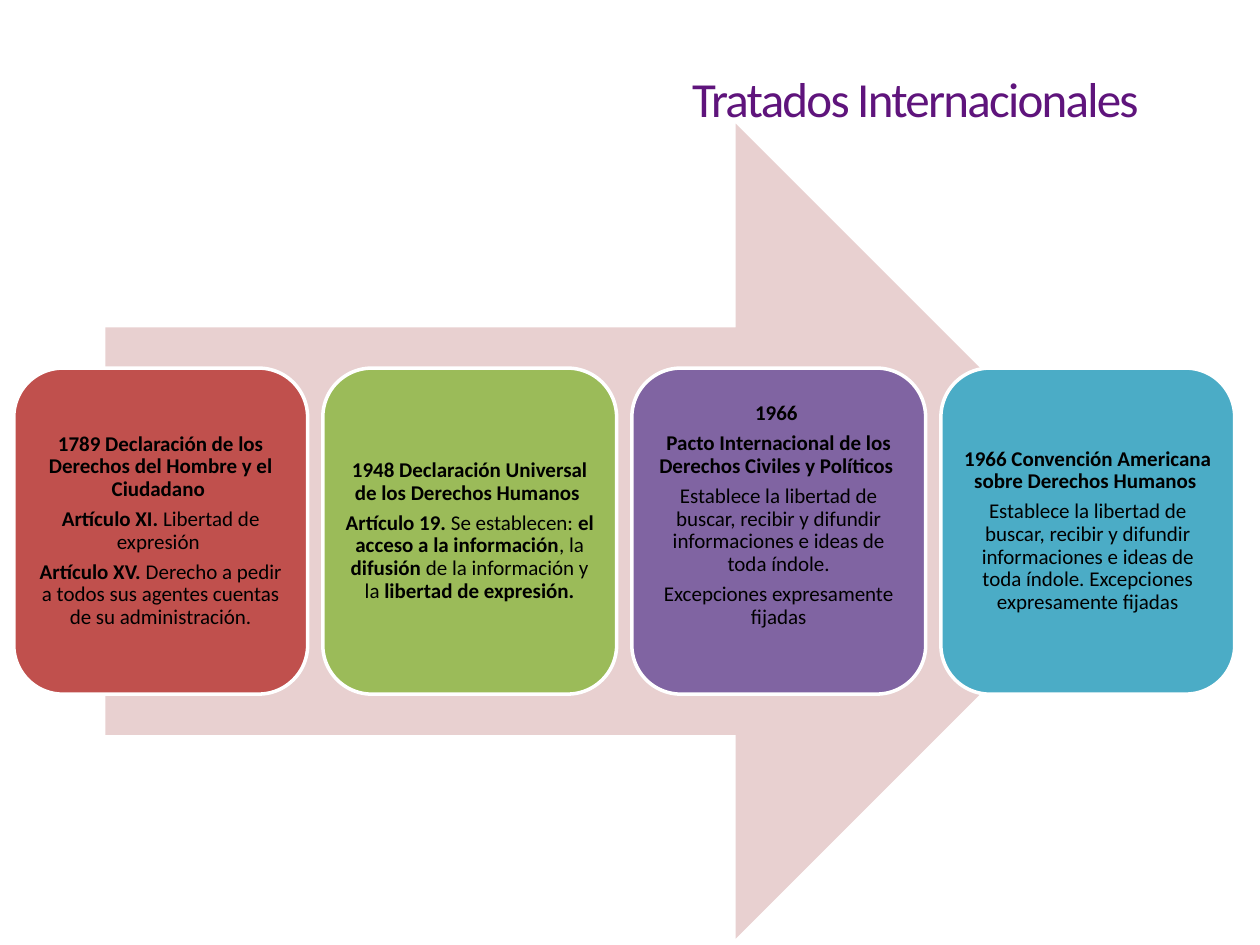
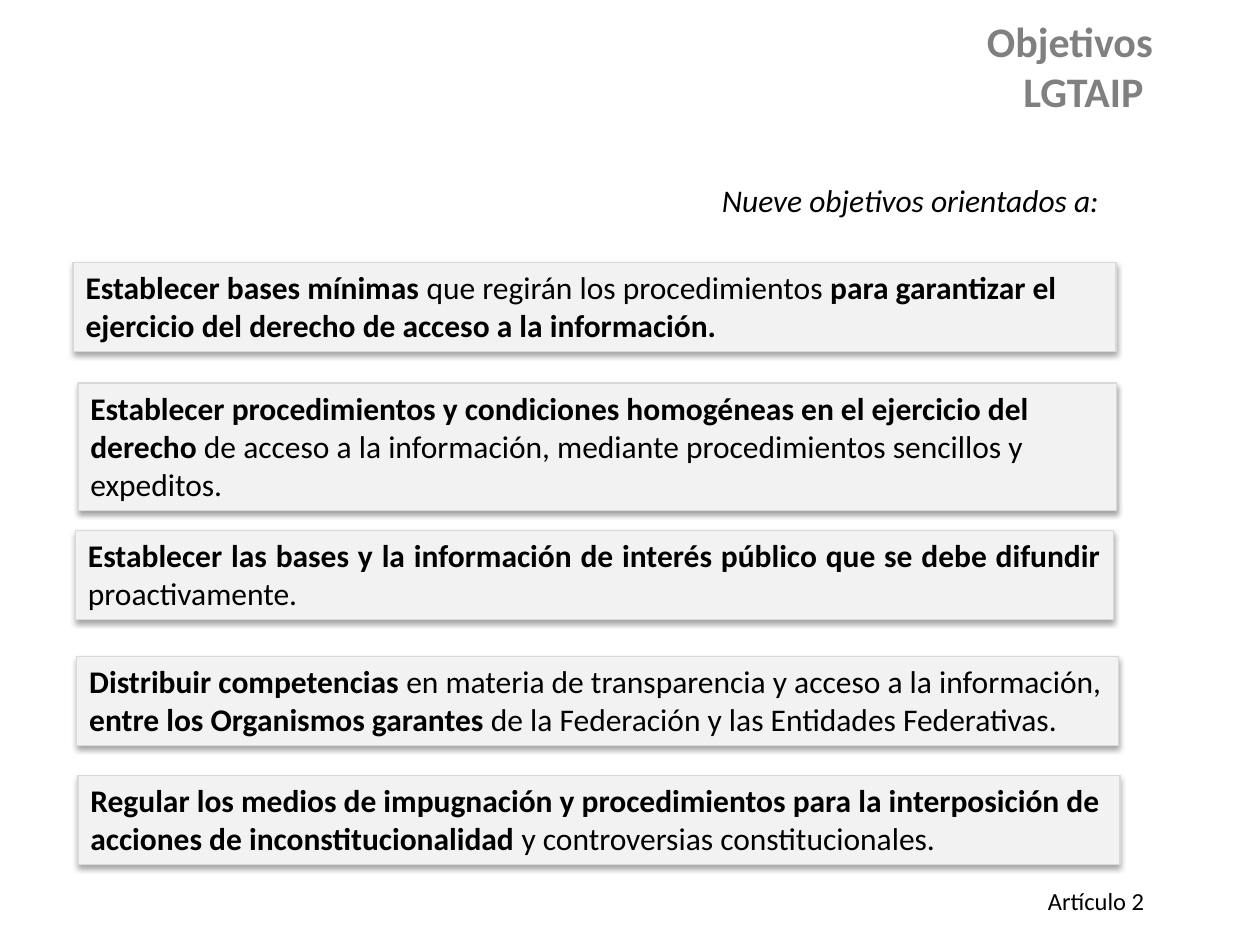
from dataclasses import dataclass
from lxml.etree import SubElement
from pptx import Presentation
from pptx.dml.color import RGBColor
from pptx.enum.shapes import MSO_SHAPE as Preset
from pptx.enum.text import MSO_ANCHOR as Anchor, MSO_AUTO_SIZE as AutoSize, PP_ALIGN as Align
from pptx.oxml.ns import qn
from pptx.util import Pt

FONT = "Calibri"
BLACK = RGBColor(0x00, 0x00, 0x00)
WHITE = RGBColor(0xFF, 0xFF, 0xFF)
PURPLE = RGBColor(0x5F, 0x14, 0x7C)
GREY = RGBColor(0x80, 0x80, 0x80)
PALE_GREY = RGBColor(0xF2, 0xF2, 0xF2)
EDGE_GREY = RGBColor(0xD9, 0xD9, 0xD9)
PALE_PINK = RGBColor(0xE8, 0xD0, 0xD0)
RED = RGBColor(0xC0, 0x50, 0x4D)
GREEN = RGBColor(0x9B, 0xBB, 0x59)
VIOLET = RGBColor(0x80, 0x64, 0xA2)
BLUE = RGBColor(0x4B, 0xAC, 0xC6)
BOLD, PLAIN = True, False
RIGHTS = "Establece la libertad de buscar, recibir y difundir informaciones e ideas de toda índole."
EXCEPTIONS = "Excepciones expresamente fijadas"

TREATIES = [
    (RED, 3.6, [
        [(BOLD, "1789 Declaración de los Derechos del Hombre y el Ciudadano ")],
        [(BOLD, "Artículo XI."), (PLAIN, " Libertad de expresión ")],
        [(BOLD, "Artículo XV."),
         (PLAIN, " Derecho a pedir a todos sus agentes cuentas de su administración.")],
    ]),
    (GREEN, 3.6, [
        [(BOLD, "1948 Declaración Universal de los Derechos Humanos ")],
        [(BOLD, "Artículo 19. "), (PLAIN, "Se establecen: "),
         (BOLD, "el acceso a la información"), (PLAIN, ", la "), (BOLD, "difusión "),
         (PLAIN, "de la información y la "), (BOLD, "libertad de expresión.")],
    ]),
    (VIOLET, 21, [
        [(BOLD, "1966 ")],
        [(BOLD, "Pacto Internacional de los Derechos Civiles y Políticos ")],
        [(PLAIN, RIGHTS)],
        [(PLAIN, EXCEPTIONS)],
    ]),
    (BLUE, 3.6, [
        [(BOLD, "1966 Convención Americana sobre Derechos Humanos ")],
        [(PLAIN, f"{RIGHTS} {EXCEPTIONS}")],
    ]),
]

OBJECTIVES = [
    ((41.8, 149.8, 596, 51), Align.LEFT, [
        [(BOLD, "Establecer bases mínimas "), (PLAIN, "que regirán los procedimientos "),
         (BOLD, "para garantizar el ejercicio del derecho de acceso a la información.")],
    ]),
    ((44.6, 218.9, 593.3, 72.7), Align.LEFT, [
        [(BOLD, "Establecer procedimientos y condiciones homogéneas en el ejercicio del derecho "),
         (PLAIN, "de acceso a la información, mediante procedimientos sencillos y expeditos.")],
    ]),
    ((43.2, 303, 593.3, 51), Align.JUSTIFY, [
        [(BOLD, "Establecer las bases y la información de interés público que se debe difundir "),
         (PLAIN, "proactivamente.")],
    ]),
    ((43.9, 375, 595.4, 51), Align.LEFT, [
        [(BOLD, "Distribuir competencias "),
         (PLAIN, "en materia de transparencia y acceso a la información,")],
        [(BOLD, "entre los Organismos garantes"),
         (PLAIN, " de la Federación y las Entidades Federativas.")],
    ]),
    ((44.6, 443, 595.4, 51), Align.LEFT, [
        [(BOLD, "Regular los medios de impugnación y procedimientos para la interposición "
                "de acciones de inconstitucionalidad"),
         (PLAIN, " y controversias constitucionales.")],
    ]),
]


@dataclass
class TextStyle:
    size: float
    color: RGBColor = BLACK
    align: Align = Align.LEFT
    italic: bool = False
    spacing: float = 0
    line: float = 1
    after: float = 0


def write(frame, paragraphs, style):
    frame.word_wrap = True
    for index, parts in enumerate(paragraphs):
        paragraph = frame.add_paragraph() if index else frame.paragraphs[0]
        paragraph.alignment = style.align
        paragraph.line_spacing = style.line
        paragraph.space_after = Pt(style.after)
        for bold, text in parts:
            if text == "\n":
                paragraph.add_line_break()
                continue
            run = paragraph.add_run()
            run.text = text
            font = run.font
            font.name, font.size = FONT, Pt(style.size)
            font.bold, font.italic = bold, style.italic
            font.color.rgb = style.color
            if style.spacing:
                run._r.get_or_add_rPr().set("spc", str(int(style.spacing * 100)))


def add_title(slide, box, parts, style):
    title = slide.shapes.title
    title.left, title.top, title.width, title.height = map(Pt, box)
    title.text_frame.auto_size = AutoSize.NONE
    title.text_frame.vertical_anchor = Anchor.MIDDLE
    write(title.text_frame, [parts], style)


def add_label(slide, box, text, style):
    label = slide.shapes.add_textbox(*map(Pt, box))
    write(label.text_frame, [[(PLAIN, text)]], style)


def add_block(slide, preset, box, fill, edge=None, edge_width=0.75):
    block = slide.shapes.add_shape(preset, *map(Pt, box))
    block.shadow.inherit = False
    block.fill.solid()
    block.fill.fore_color.rgb = fill
    if edge is None:
        block.line.fill.background()
    else:
        block.line.color.rgb = edge
        block.line.width = Pt(edge_width)
    return block


def add_soft_shadow(block):
    effects = block._element.spPr.find(qn("a:effectLst"))
    shadow = SubElement(effects, qn("a:outerShdw"), blurRad=str(Pt(3.1)), dist=str(Pt(1.8)),
                        dir="5400000", rotWithShape="0")
    black = SubElement(shadow, qn("a:srgbClr"), val=str(BLACK))
    SubElement(black, qn("a:alpha"), val="35000")


def add_timeline(slide, left, top, width, height):
    gap, card_height = 8.65, height * 0.4
    card_width = (width - gap * (len(TREATIES) - 1)) / len(TREATIES)
    arrow_width = width * 0.85
    add_block(slide, Preset.RIGHT_ARROW,
              (left + (width - arrow_width) / 2, top, arrow_width, height), PALE_PINK)
    style = TextStyle(12, align=Align.CENTER, line=0.9, after=4.2)
    for index, (color, bottom_inset, paragraphs) in enumerate(TREATIES):
        box = (left + index * (card_width + gap), top + (height - card_height) / 2,
               card_width, card_height)
        card = add_block(slide, Preset.ROUNDED_RECTANGLE, box, color, WHITE, 2)
        frame = card.text_frame
        frame.margin_left = frame.margin_right = frame.margin_top = Pt(3.6)
        frame.margin_bottom = Pt(bottom_inset)
        frame.vertical_anchor = Anchor.MIDDLE
        write(frame, paragraphs, style)


def add_objective(slide, box, align, paragraphs):
    panel = add_block(slide, Preset.RECTANGLE, box, PALE_GREY, EDGE_GREY)
    add_soft_shadow(panel)
    panel.text_frame.vertical_anchor = Anchor.TOP
    write(panel.text_frame, paragraphs, TextStyle(18, align=align))


def build_treaties(slide):
    add_title(slide, (161.3, 11.5, 501.8, 88.6), [(PLAIN, "Tratados Internacionales ")],
              TextStyle(28, PURPLE, Align.RIGHT, spacing=-1))
    add_timeline(slide, 7.9, 70.6, 697.7, 465.8)


def build_objectives(slide):
    add_title(slide, (450.7, -2.2, 215.3, 79.2),
              [(BOLD, "Objetivos"), (BOLD, "\n"), (BOLD, "LGTAIP ")],
              TextStyle(24, GREY, Align.RIGHT))
    add_label(slide, (405.4, 100, 300, 29), "Nueve objetivos orientados a:",
              TextStyle(18, italic=True))
    for box, align, paragraphs in OBJECTIVES:
        add_objective(slide, box, align, paragraphs)
    add_label(slide, (553, 502.6, 108, 24.5), "Artículo 2", TextStyle(14, align=Align.RIGHT))


def main():
    deck = Presentation()
    deck.slide_width, deck.slide_height = Pt(720), Pt(540)
    title_only = deck.slide_layouts[5]
    for build in (build_treaties, build_objectives):
        build(deck.slides.add_slide(title_only))
    deck.save("out.pptx")


if __name__ == "__main__":
    main()
